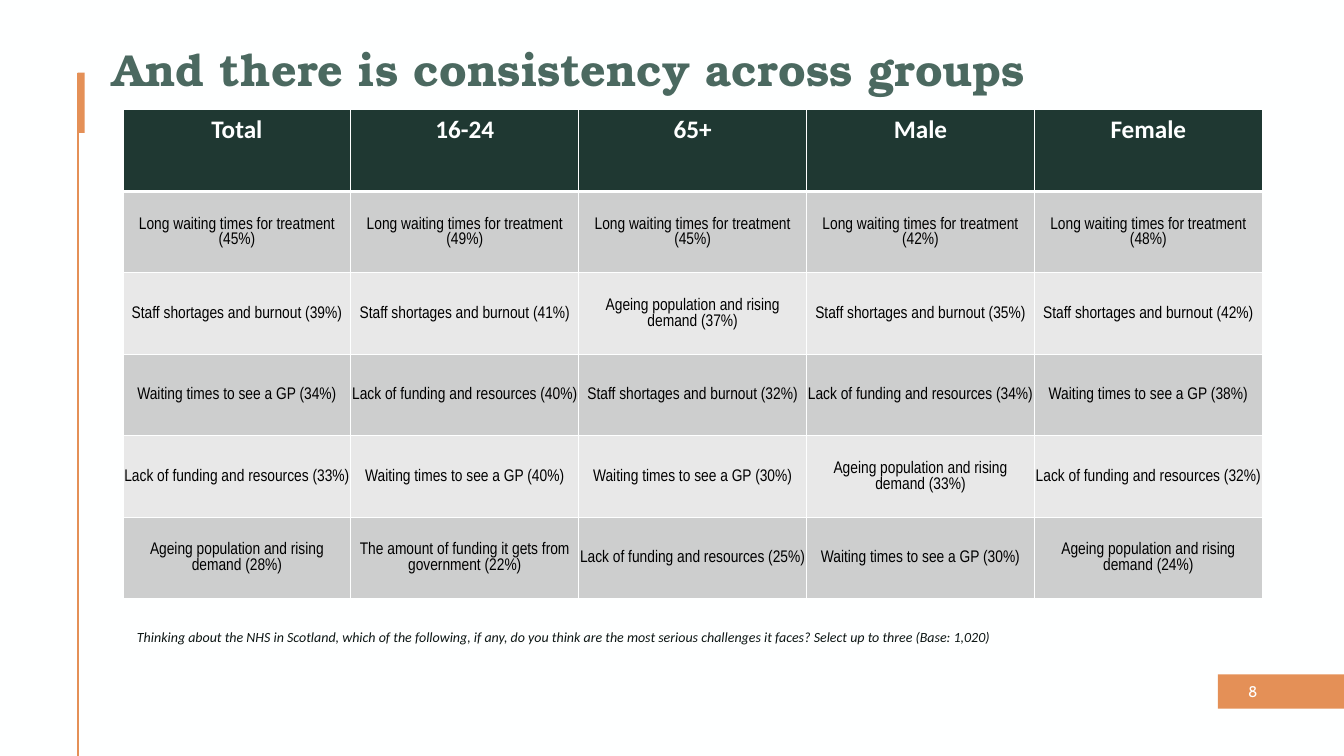
from dataclasses import dataclass

from lxml.etree import SubElement
from pptx import Presentation
from pptx.dml.color import RGBColor
from pptx.enum.shapes import MSO_CONNECTOR, MSO_SHAPE
from pptx.enum.text import MSO_ANCHOR, MSO_AUTO_SIZE, PP_ALIGN
from pptx.oxml.ns import qn
from pptx.util import Inches, Pt

TITLE = "And there is consistency across groups"
PAGE = "8"
QUESTION = (
    "Thinking about the NHS in Scotland, which of the following, if any, do you think "
    "are the most serious challenges it faces? Select up to three (Base: 1,020)"
)

WAITS = "Long waiting times for treatment"
STAFF = "Staff shortages and burnout"
GP = "Waiting times to see a GP"
FUNDS = "Lack of funding and resources"
AGEING = "Ageing population and rising demand"
AMOUNT = "The amount of funding it gets from government"

# Challenges per group, most serious first, with the percentage choosing each
GROUPS = {
    "Total": [(WAITS, 45), (STAFF, 39), (GP, 34), (FUNDS, 33), (AGEING, 28)],
    "16-24": [(WAITS, 49), (STAFF, 41), (FUNDS, 40), (GP, 40), (AMOUNT, 22)],
    "65+": [(WAITS, 45), (AGEING, 37), (STAFF, 32), (GP, 30), (FUNDS, 25)],
    "Male": [(WAITS, 42), (STAFF, 35), (FUNDS, 34), (AGEING, 33), (GP, 30)],
    "Female": [(WAITS, 48), (STAFF, 42), (GP, 38), (FUNDS, 32), (AGEING, 24)],
}


@dataclass(frozen=True)
class Theme:
    paper: str = "FEFFFF"
    accent: str = "E49057"
    header: str = "1F3832"
    bands: tuple = ("CDCECE", "E8E8E8")
    title: tuple = ("TeX Gyre Bonum", 32, "4B6960", {"bold": True})
    page: tuple = ("Cabin", 11, "FEFFFF", {})
    group: tuple = ("Calibri", 18, "FEFFFF", {"bold": True})
    challenge: tuple = ("Arial Narrow", 12, "000000", {"bold": False})
    question: tuple = ("Calibri", 10, "0D1614", {"italic": True})


THEME = Theme()
WIDTH, HEIGHT = 13.33, 7.5
RAIL_X, RAIL_Y = 0.77, 0.72
TABLE_X, TABLE_Y, TABLE_W, TABLE_H = 1.22, 1.09, 11.3, 4.85
CELL_FRAME = {
    "vertical_anchor": MSO_ANCHOR.MIDDLE,
    "margin_left": Inches(0.01),
    "margin_top": Inches(0.01),
    "margin_right": Inches(0.01),
    "margin_bottom": 0,
}


def paint(fill, color):
    fill.solid()
    fill.fore_color.rgb = RGBColor.from_string(color)


def write(frame, text, style, align):
    face, size, color, traits = style
    frame.text = text
    paragraph = frame.paragraphs[0]
    paragraph.alignment = align
    font = paragraph.runs[0].font
    for key, value in {"name": face, "size": Pt(size), **traits}.items():
        setattr(font, key, value)
    font.color.rgb = RGBColor.from_string(color)
    return paragraph


def add_accent(slide, *box):
    block = slide.shapes.add_shape(MSO_SHAPE.RECTANGLE, *map(Inches, box))
    block.shadow.inherit = False
    paint(block.fill, THEME.accent)
    block.line.fill.background()


def add_label(slide, box, text, style, align, anchor):
    frame = slide.shapes.add_textbox(*map(Inches, box)).text_frame
    frame.word_wrap = True
    frame.vertical_anchor = anchor
    write(frame, text, style, align)


def set_borders(cell, **widths):
    """Rule each named side (L, R, T, B) at its width in points."""
    properties = cell._tc.get_or_add_tcPr()
    for index, (side, width) in enumerate(widths.items()):
        rule = SubElement(properties, qn(f"a:ln{side}"), w=str(Pt(width)))
        color = SubElement(SubElement(rule, qn("a:solidFill")), qn("a:srgbClr"))
        color.set("val", THEME.paper)
        properties.insert(index, rule)


def add_rail(slide):
    rail = slide.shapes.add_connector(
        MSO_CONNECTOR.STRAIGHT, *map(Inches, (RAIL_X, RAIL_Y, RAIL_X, HEIGHT))
    )
    rail.line.color.rgb = RGBColor.from_string(THEME.accent)
    rail.line.width = Pt(1.5)
    SubElement(rail._element.spPr, qn("a:effectLst"))
    add_accent(slide, RAIL_X, RAIL_Y, 0.07, 0.6)


def add_title(slide):
    title = slide.shapes.title
    title.left, title.top, title.width, title.height = map(
        Inches, (1.02, 0.41, 11.5, 0.6)
    )
    frame = title.text_frame
    frame.auto_size = MSO_AUTO_SIZE.NONE
    frame.vertical_anchor = MSO_ANCHOR.MIDDLE
    write(frame, TITLE, THEME.title, PP_ALIGN.LEFT).line_spacing = 0.9


def add_rankings(slide):
    ranks = zip(*GROUPS.values())
    rows = [list(GROUPS)]
    rows += [[f"{name} ({share}%)" for name, share in rank] for rank in ranks]
    box = map(Inches, (TABLE_X, TABLE_Y, TABLE_W, TABLE_H))
    table = slide.shapes.add_table(len(rows), len(GROUPS), *box).table
    for column in table.columns:
        column.width = Inches(TABLE_W / len(GROUPS))
    for row in table.rows:
        row.height = Inches(TABLE_H / len(rows))

    for r, texts in enumerate(rows):
        for c, text in enumerate(texts):
            cell = table.cell(r, c)
            if r == 0:
                style, color = THEME.group, THEME.header
            else:
                style, color = THEME.challenge, THEME.bands[(r - 1) % 2]
                for key, value in CELL_FRAME.items():
                    setattr(cell, key, value)
            paint(cell.fill, color)
            set_borders(cell, L=1, R=1, T=3 if r == 1 else 1, B=3 if r == 0 else 1)
            write(cell.text_frame, text, style, PP_ALIGN.CENTER)


def main():
    deck = Presentation()
    deck.slide_width, deck.slide_height = Inches(WIDTH), Inches(HEIGHT)
    slide = deck.slides.add_slide(deck.slide_layouts.get_by_name("Title Only"))
    paint(slide.background.fill, THEME.paper)

    add_rail(slide)
    add_accent(slide, WIDTH - 1.25, 6.69, 1.25, 0.34)
    add_title(slide)
    add_label(slide, (9.57, 6.66, 3, 0.4), PAGE, THEME.page,
              PP_ALIGN.RIGHT, MSO_ANCHOR.MIDDLE)
    add_rankings(slide)
    add_label(slide, (1.26, 6.19, 10.21, 0.27), QUESTION, THEME.question,
              PP_ALIGN.LEFT, MSO_ANCHOR.TOP)
    deck.save("out.pptx")


if __name__ == "__main__":
    main()
